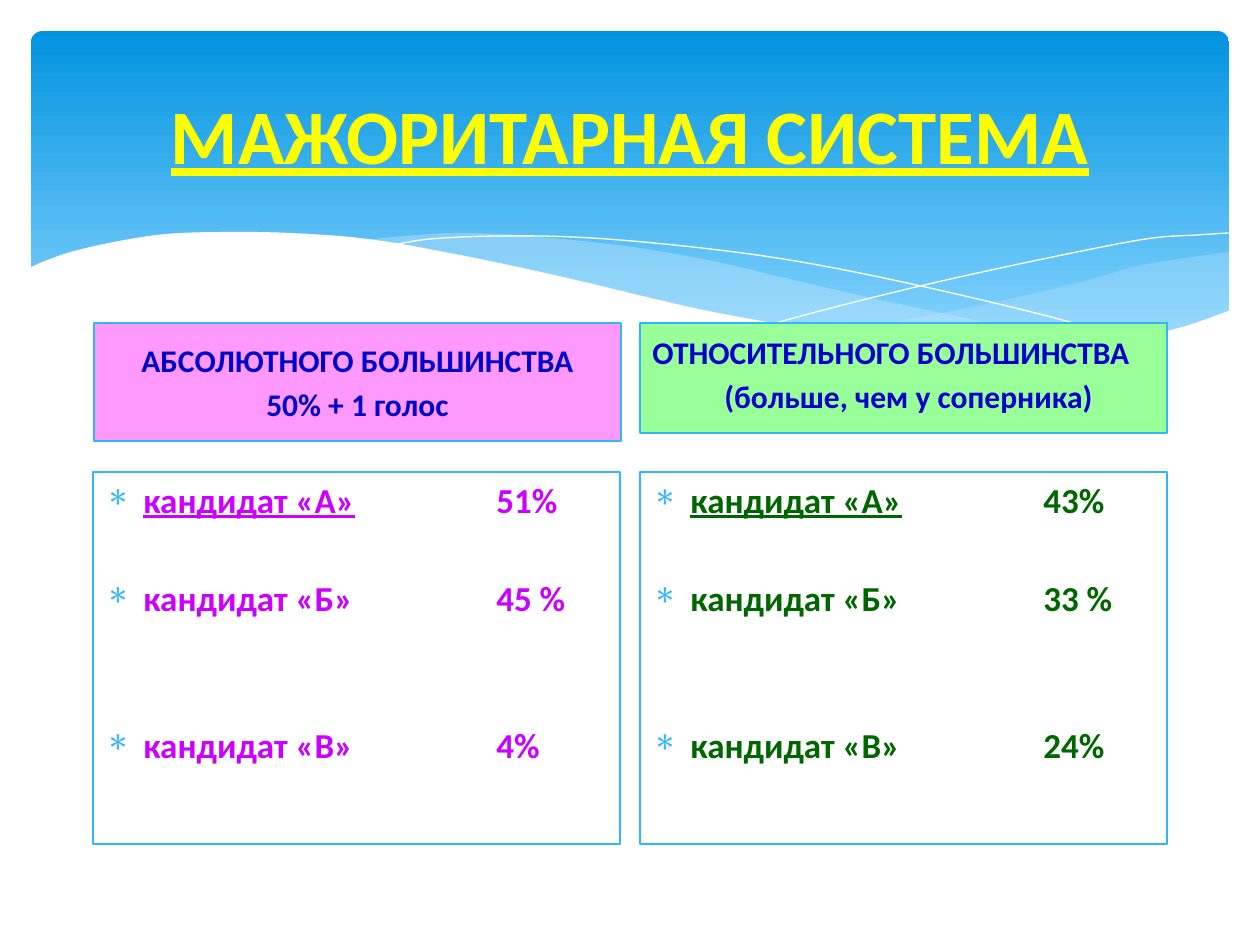
from lxml import etree
from pptx import Presentation
from pptx import util as u
from pptx.dml.color import RGBColor
from pptx.enum import shapes, text
from pptx.oxml import ns

FONT = "Calibri"
SKY = "31B6FD"
RIGHT_WAVE = [
    [(1198, 221), (1111, 234), (1054, 250), (951, 274), (802, 303)],
    [(802, 303), (891, 314), (967, 319), (1020, 318), (1078, 312), (1129, 303), (1198, 280)],
]
MIDDLE_WAVE = [
    [(1094, 313), (986, 297), (859, 271), (762, 249), (686, 231), (601, 216),
     (498, 205), (424, 202), (363, 206), (329, 210)],
    [(329, 210), (425, 225), (535, 249), (637, 271), (768, 298), (880, 314),
     (972, 319), (1037, 318), (1094, 313)],
]
FALLING_LINE = [[(358, 215), (400, 208), (474, 205), (560, 207), (670, 217),
                 (770, 231), (885, 254), (1016, 285), (1112, 312)]]
RISING_LINE = [[(741, 293), (816, 273), (911, 250), (1022, 226), (1115, 208),
                (1167, 204), (1198, 202)]]
WHITE_WAVE = [
    [(1200, 279), (1140, 299), (1056, 314), (972, 318), (884, 312), (785, 299),
     (668, 278), (532, 246), (429, 224), (337, 208), (259, 202), (192, 201),
     (135, 203), (88, 210), (43, 220), (14, 230), (-2, 237)],
    [(-2, 384), (1200, 384)],
]


def px(n):
    """Turn px (126 to the inch) into EMU."""
    return u.Emu(round(n * 914400 / 126))


def rgb(value):
    """Turn a hex string into a colour."""
    return RGBColor.from_string(value)


def smooth(points, steps=6):
    """Return a Catmull-Rom curve through the points."""
    if len(points) < 3:
        return points
    padded = [points[0], *points, points[-1]]
    curve = [points[0]]
    for a, b, c, d in zip(padded, padded[1:], padded[2:], padded[3:]):
        for t in (k / steps for k in range(1, steps + 1)):
            curve.append(tuple(
                (2 * q + (r - p) * t + (2 * p - 5 * q + 4 * r - v) * t**2
                 + (3 * q - p - 3 * r + v) * t**3) / 2
                for p, q, r, v in zip(a, b, c, d)))
    return curve


def add_wave(s, x, y, curves, fill=None, opacity=100):
    """Draw a filled wave, or a white hairline when no fill is given."""
    points = [(px(x + a), px(y + b)) for curve in curves for a, b in smooth(curve)]
    builder = s.shapes.build_freeform(*points[0], scale=1.0)
    builder.add_line_segments(points[1:], close=fill is not None)
    sp = builder.convert_to_shape()
    sp.shadow.inherit = False
    if fill is None:
        sp.fill.background()
        sp.line.color.rgb = rgb("FFFFFF")
        sp.line.width = u.Pt(0)
        return
    sp.fill.solid()
    sp.fill.fore_color.rgb = rgb(fill)
    sp.line.fill.background()
    if opacity < 100:
        color = sp.fill._xPr.find(".//" + ns.qn("a:srgbClr"))
        etree.SubElement(color, ns.qn("a:alpha"), val=str(opacity * 1000))


def add_banner(s, x, y, w, h):
    """Draw the blue banner with its waves."""
    sp = s.shapes.add_shape(shapes.MSO_SHAPE.ROUNDED_RECTANGLE, px(x), px(y), px(w), px(h))
    sp.adjustments[0] = 0.034
    sp.shadow.inherit = False
    sp.line.fill.background()
    sp.fill.gradient()
    sp.fill.gradient_angle = 270
    for stop, color, position in zip(sp.fill.gradient_stops, ("0293E0", "83D3FE"), (0, 0.9)):
        stop.color.rgb = rgb(color)
        stop.position = position
    add_wave(s, x, y, RIGHT_WAVE, "C6E7FC", 29)
    add_wave(s, x, y, MIDDLE_WAVE, "C6E7FC", 40)
    add_wave(s, x, y, FALLING_LINE)
    add_wave(s, x, y, RISING_LINE)
    add_wave(s, x, y, WHITE_WAVE, "FFFFFF")


def style(p, size, color, align, before=0):
    """Set the font, alignment and space before of a paragraph."""
    p.alignment = align
    p.space_before = u.Pt(before)
    p.font.name = FONT
    p.font.size = u.Pt(size)
    p.font.bold = True
    p.font.color.rgb = rgb(color)


def add_title(s, x, y, w, h, title):
    """Write the underlined slide title."""
    tf = s.shapes.add_textbox(px(x), px(y), px(w), px(h)).text_frame
    tf.word_wrap = True
    tf.vertical_anchor = text.MSO_ANCHOR.MIDDLE
    p = tf.paragraphs[0]
    p.text = title
    style(p, 44, "FFFF00", text.PP_ALIGN.CENTER)
    p.font.underline = True


def add_panel(s, x, y, w, h, anchor, fill=None):
    """Draw an outlined rectangle and return its text frame."""
    sp = s.shapes.add_shape(shapes.MSO_SHAPE.RECTANGLE, px(x), px(y), px(w), px(h))
    sp.shadow.inherit = False
    sp.line.color.rgb = rgb(SKY)
    sp.line.width = u.Pt(1.5)
    if fill:
        sp.fill.solid()
        sp.fill.fore_color.rgb = rgb(fill)
    else:
        sp.fill.background()
    tf = sp.text_frame
    tf.word_wrap = True
    tf.vertical_anchor = anchor
    return tf


def add_heading(s, x, y, w, h, lines, fill, align, indent=0, bottom=6):
    """Write a two-line heading on a coloured panel."""
    tf = add_panel(s, x, y, w, h, text.MSO_ANCHOR.MIDDLE, fill)
    tf.margin_bottom = px(bottom)
    for i, line in enumerate(lines):
        p = tf.add_paragraph() if i else tf.paragraphs[0]
        p.text = line
        style(p, 18, "0000CC", align, 3.6)
    p._p.get_or_add_pPr().set("marL", str(px(indent)))


def add_results(s, x, y, w, h, shares, color):
    """List the candidates with their shares, the winner underlined."""
    tf = add_panel(s, x, y, w, h, text.MSO_ANCHOR.TOP)
    for i, (name, share, before) in enumerate(zip("АБВ", shares, (4, 32, 60))):
        p = tf.add_paragraph() if i else tf.paragraphs[0]
        style(p, 20, color, text.PP_ALIGN.LEFT, before)
        r = p.add_run()
        r.text = f"кандидат «{name}»"
        r.font.underline = i == 0
        p.add_run().text = f"\t{share}"
        add_bullet(p, 38, 391)


def add_bullet(p, indent, tab):
    """Give a paragraph an asterisk bullet, a hanging indent and a tab stop."""
    pPr = p._p.get_or_add_pPr()
    pPr.set("marL", str(px(indent)))
    pPr.set("indent", str(-px(indent)))
    color = etree.Element(ns.qn("a:buClr"))
    etree.SubElement(color, ns.qn("a:srgbClr"), val=SKY)
    bullet = etree.Element(ns.qn("a:buChar"), char="∗")
    tabs = etree.Element(ns.qn("a:tabLst"))
    etree.SubElement(tabs, ns.qn("a:tab"), pos=str(px(tab)), algn="l")
    for element in (color, bullet, tabs):
        pPr.find(ns.qn("a:defRPr")).addprevious(element)


def main():
    """Build the slide and save it."""
    prs = Presentation()
    prs.slide_width, prs.slide_height = px(1260), px(945)
    s = prs.slides.add_slide(prs.slide_layouts[6])
    add_banner(s, 31, 31, 1198, 340)
    add_title(s, 63, 47, 1134, 173, "МАЖОРИТАРНАЯ СИСТЕМА")
    add_heading(s, 94, 323, 527, 118, ("АБСОЛЮТНОГО БОЛЬШИНСТВА", "50% + 1 голос"),
                "FF99FF", text.PP_ALIGN.CENTER)
    add_results(s, 93, 472, 527, 372, ("51%", "45 %", "4%"), "CC00FF")
    add_heading(s, 640, 323, 527, 110, ("ОТНОСИТЕЛЬНОГО БОЛЬШИНСТВА", "(больше, чем у соперника)"),
                "99FF99", text.PP_ALIGN.LEFT, indent=72, bottom=14)
    add_results(s, 640, 472, 527, 372, ("43%", "33 %", "24%"), "006600")
    prs.save("out.pptx")


if __name__ == "__main__":
    main()
